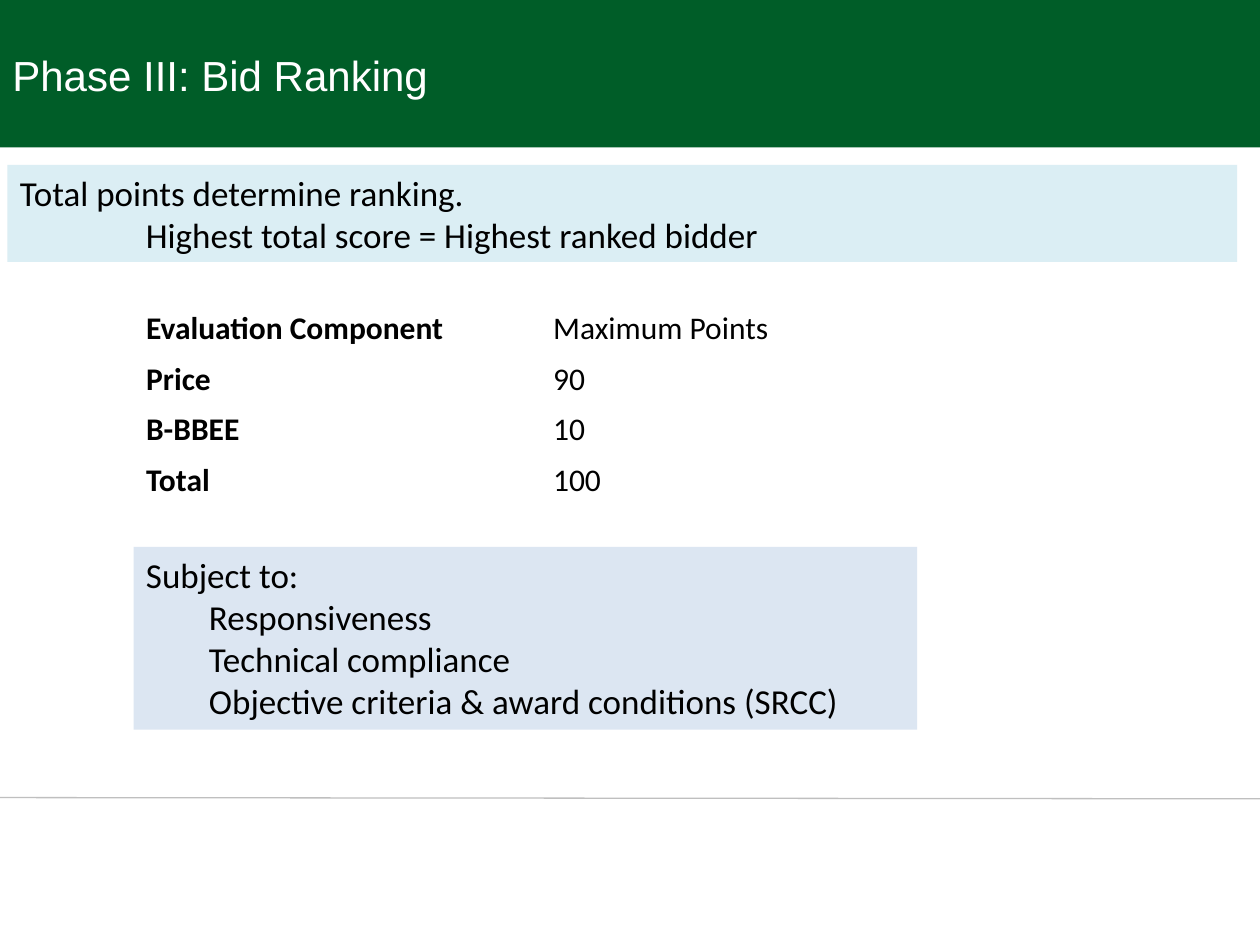
from lxml.etree import SubElement
from pptx import Presentation
from pptx.dml.color import RGBColor
from pptx.enum.shapes import MSO_CONNECTOR as CONNECTOR, MSO_SHAPE as SHAPE
from pptx.enum.text import MSO_ANCHOR as ANCHOR, PP_ALIGN as ALIGN
from pptx.oxml.ns import qn
from pptx.util import Inches, Pt

GREEN, WHITE, BLACK, GREY = "005D28", "FFFFFF", "000000", "BFBFBF"
PALE_TEAL, PALE_BLUE = "DBEEF4", "DCE6F2"
TITLE_FONT = {"name": "Arial", "size": Pt(24), "bold": False}
NOTE_FONT = {"name": "Calibri", "size": Pt(20), "bold": False}
TABLE_FONT = {"name": "Calibri", "size": Pt(18), "bold": False}


def rgb(color):
    return RGBColor.from_string(color)


def write(para, text, font, color=BLACK):
    para.alignment = ALIGN.LEFT
    span = para.add_run()
    span.text = text
    for name, value in font.items():
        setattr(span.font, name, value)
    span.font.color.rgb = rgb(color)


def add_panel(page, box, color):
    panel = page.shapes.add_shape(SHAPE.RECTANGLE, *map(Inches, box))
    panel.shadow.inherit = False
    panel.fill.solid()
    panel.fill.fore_color.rgb = rgb(color)
    panel.line.fill.background()
    return panel


def add_header(page, box, title):
    left, top, width, height = box
    add_panel(page, box, GREEN)
    title_box = page.shapes.add_textbox(
        Inches(left), Inches(top + 0.13), Inches(width - 0.12), Inches(0.71))
    frame = title_box.text_frame
    frame.word_wrap = True
    frame.vertical_anchor = ANCHOR.BOTTOM
    write(frame.paragraphs[0], title, TITLE_FONT, WHITE)


def add_footer_line(page, left, top, width):
    line = page.shapes.add_connector(
        CONNECTOR.STRAIGHT, Inches(left), Inches(top),
        Inches(left + width), Inches(top + 0.01))
    line.line.color.rgb = rgb(GREY)
    line.line.width = Pt(0.75)
    SubElement(line._element.spPr, qn("a:effectLst"))


def add_note(page, box, color, lead, details, indent):
    """Fill a panel with a lead line and detail lines indented in inches."""
    frame = add_panel(page, box, color).text_frame
    frame.word_wrap = True
    frame.vertical_anchor = ANCHOR.TOP
    write(frame.paragraphs[0], lead, NOTE_FONT)
    for detail in details:
        para = frame.add_paragraph()
        para._p.get_or_add_pPr().set("marL", str(Inches(indent)))
        write(para, detail, NOTE_FONT)


def add_points_table(page, box, rows):
    frame = page.shapes.add_table(len(rows), len(rows[0]), *map(Inches, box))
    table = frame.table
    table.first_row = table.horz_banding = False
    for row, texts in enumerate(rows):
        for column, text in enumerate(texts):
            cell = table.cell(row, column)
            cell.fill.background()
            cell.vertical_anchor = ANCHOR.MIDDLE
            font = {**TABLE_FONT, "bold": column == 0}
            write(cell.text_frame.paragraphs[0], text, font)


def main():
    deck = Presentation()
    deck.slide_width, deck.slide_height = Inches(10), Inches(7.5)
    page = deck.slides.add_slide(deck.slide_layouts[6])

    add_header(page, (0, 0, 10, 1.17), "Phase III: Bid Ranking")
    add_footer_line(page, 0, 6.33, 10)
    add_points_table(page, (1.06, 2.41, 6.46, 1.6), [
        ("Evaluation Component", "Maximum Points"),
        ("Price", "90"),
        ("B-BBEE", "10"),
        ("Total", "100"),
    ])
    add_note(page, (0.06, 1.31, 9.76, 0.77), PALE_TEAL,
             "Total points determine ranking.",
             ["Highest total score = Highest ranked bidder"], 1)
    add_note(page, (1.06, 4.34, 6.22, 1.45), PALE_BLUE, "Subject to:",
             ["Responsiveness", "Technical compliance",
              "Objective criteria & award conditions (SRCC)"], 0.5)

    deck.save("out.pptx")


if __name__ == "__main__":
    main()
